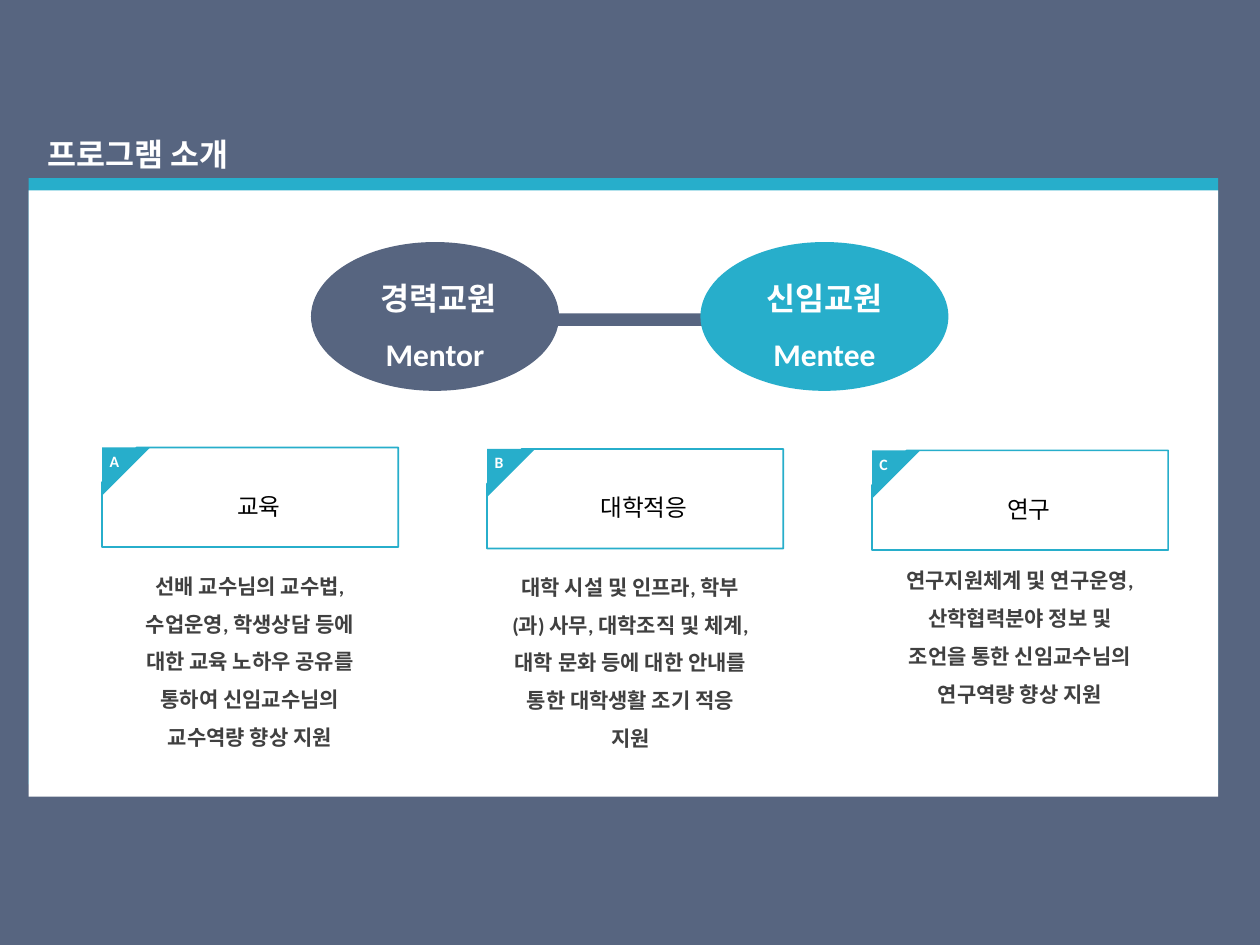
from dataclasses import dataclass

from lxml import etree
from pptx import Presentation
from pptx.dml.color import RGBColor
from pptx.enum.shapes import MSO_SHAPE
from pptx.enum.text import MSO_ANCHOR, MSO_AUTO_SIZE, PP_ALIGN
from pptx.oxml.ns import qn
from pptx.util import Cm, Pt

RECT, OVAL, SNIP = MSO_SHAPE.RECTANGLE, MSO_SHAPE.OVAL, MSO_SHAPE.SNIP_1_RECTANGLE
TOP, MIDDLE = MSO_ANCHOR.TOP, MSO_ANCHOR.MIDDLE
LEFT, CENTER = PP_ALIGN.LEFT, PP_ALIGN.CENTER
FIXED = MSO_AUTO_SIZE.NONE

SLATE, TEAL, WHITE, BLACK, GRAY = "576580", "27AECB", "FFFFFF", "000000", "404040"
CARD_W, CARD_H, CORNER = 5.97, 2.01, 0.97


@dataclass
class Box:
    x: float
    y: float
    w: float
    h: float

    def place(self) -> tuple:
        return Cm(self.x), Cm(self.y), Cm(self.w), Cm(self.h)


@dataclass
class Card:
    mark: str
    head: str
    body: str
    spot: Box


@dataclass
class Role:
    lines: list[str]
    color: str
    x: float


CARDS = [
    Card("A", "교육",
         "선배 교수님의 교수법, 수업운영, 학생상담 등에 대한 교육 노하우 공유를 "
         "통하여 신임교수님의 교수역량 향상 지원", Box(2.41, 11.18, 5.26, 4.01)),
    Card("B", "대학적응",
         "대학 시설 및 인프라, 학부(과) 사무, 대학조직 및 체계, 대학 문화 등에 대한 "
         "안내를 통한 대학생활 조기 적응 지원", Box(10.08, 11.2, 5.26, 4.01)),
    Card("C", "연구",
         "연구지원체계 및 연구운영, 산학협력분야 정보 및 조언을 통한 "
         "신임교수님의 연구역량 향상 지원", Box(17.93, 11.07, 5.26, 4.01)),
]
ROLES = [
    Role([" 경력교원", "Mentor"], SLATE, 6.27),
    Role(["신임교원", "Mentee"], TEAL, 14.12),
]


def rgb(code: str) -> RGBColor:
    return RGBColor.from_string(code)


def apply(item, values: dict) -> None:
    for name, value in values.items():
        setattr(item, name, value)


def paint(shape, fill: str, line: str = "") -> None:
    shape.shadow.inherit = False
    shape.fill.solid()
    shape.fill.fore_color.rgb = rgb(fill)
    if line:
        shape.line.color.rgb = rgb(line)
        shape.line.width = Pt(1)
    else:
        shape.line.fill.background()


def write(shape, lines: list[str], size: float, color: str, bold: bool = True,
          align=CENTER, space: float = 1.0, **frame) -> None:
    """Fill the shape with one paragraph a line; frame holds text frame values."""
    text = shape.text_frame
    apply(text, {"word_wrap": True, "auto_size": FIXED, **frame})
    text.text = "\n".join(lines)
    for para in text.paragraphs:
        apply(para, {"alignment": align, "line_spacing": space})
        font = para.runs[0].font
        apply(font, {"name": "Calibri", "size": Pt(size), "bold": bold})
        font.color.rgb = rgb(color)


def draw(shapes, kind, box: Box, fill: str, line: str = ""):
    shape = shapes.add_shape(kind, *box.place())
    paint(shape, fill, line)
    return shape


def draw_panel(shapes) -> None:
    """White panel with a hard teal shadow cast upward as its top band."""
    panel = draw(shapes, RECT, Box(0.58, 3.84, 23.98, 12.22), WHITE)
    effect = panel.element.spPr.find(qn("a:effectLst"))
    cast = etree.SubElement(effect, qn("a:outerShdw"), blurRad="0",
                            dist=str(Pt(7)), dir="16200000", algn="b", rotWithShape="0")
    etree.SubElement(cast, qn("a:srgbClr"), val=TEAL)


def draw_card(shapes, card: Card, rank: int) -> None:
    x, y = 2.06 + 7.76 * rank, 9.02 + 0.03 * rank
    frame = draw(shapes, SNIP, Box(x, y, CARD_W, CARD_H), WHITE, TEAL)
    frame.adjustments[0] = 0.35
    frame.element.spPr.find(qn("a:xfrm")).set("flipH", "1")
    write(frame, [card.head], 13.5, BLACK, bold=False, vertical_anchor=MIDDLE)

    pen = shapes.build_freeform(Cm(x), Cm(y))
    pen.add_line_segments([(Cm(x + CORNER), Cm(y)), (Cm(x), Cm(y + CORNER))])
    flag = pen.convert_to_shape()
    paint(flag, TEAL)
    write(flag, [card.mark], 9, WHITE, align=LEFT, vertical_anchor=TOP,
          margin_left=Cm(0.15), margin_top=Cm(0.08),
          margin_right=Cm(0.46), margin_bottom=Cm(0.61))

    note = shapes.add_textbox(*card.spot.place())
    write(note, [card.body], 12, GRAY, space=1.5)


def draw_role(shapes, role: Role) -> None:
    oval = draw(shapes, OVAL, Box(role.x, 4.88, 5, 3), role.color)
    write(oval, role.lines, 18, WHITE, space=1.5, vertical_anchor=MIDDLE)


def main() -> None:
    deck = Presentation()
    apply(deck, {"slide_width": Cm(25.4), "slide_height": Cm(19.05)})
    slide = deck.slides.add_slide(deck.slide_layouts[5])
    back = slide.background.fill
    back.solid()
    back.fore_color.rgb = rgb(SLATE)

    shapes = slide.shapes
    title = shapes.title
    apply(title, dict(zip(("left", "top", "width", "height"),
                          Box(0.71, 2.59, 15.7, 1.02).place())))
    write(title, ["프로그램 소개"], 18, WHITE, align=LEFT, vertical_anchor=TOP)

    draw_panel(shapes)
    for rank, card in enumerate(CARDS):
        draw_card(shapes, card, rank)
    mentor, mentee = ROLES
    draw_role(shapes, mentor)
    draw(shapes, RECT, Box(11.23, 6.32, 3.12, 0.25), SLATE)
    draw_role(shapes, mentee)
    deck.save("out.pptx")


if __name__ == "__main__":
    main()
